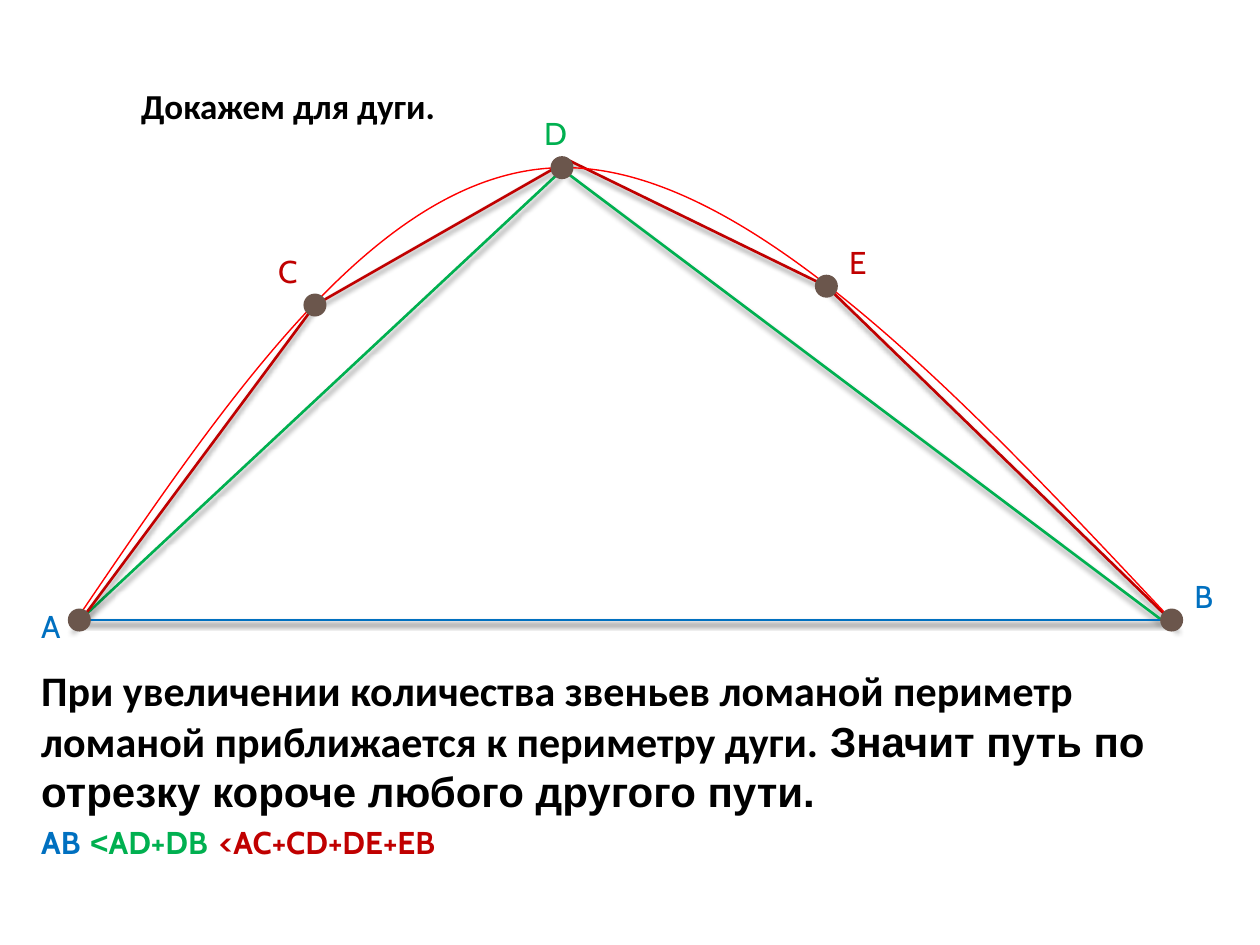
from lxml.etree import SubElement
from pptx import Presentation
from pptx.dml.color import RGBColor
from pptx.enum.shapes import MSO_CONNECTOR, MSO_SHAPE
from pptx.enum.text import MSO_ANCHOR, MSO_AUTO_SIZE, PP_ALIGN
from pptx.oxml.ns import qn
from pptx.util import Cm, Pt

BLUE = RGBColor(0x00, 0x70, 0xC0)
GREEN = RGBColor(0x00, 0xB0, 0x50)
DARK_RED = RGBColor(0xC0, 0x00, 0x00)
RED = RGBColor(0xFF, 0x00, 0x00)
BROWN = RGBColor(0x6B, 0x56, 0x4C)
BLACK = RGBColor(0x00, 0x00, 0x00)

DOT_SIZE = 0.41
LABEL_HEIGHT = 1.02
FORMULA_TOP = 16.46

# All positions are in centimetres.
A, B = (1.6, 12.5), (23.62, 12.5)
C, D, E = (6.35, 6.15), (11.33, 3.38), (16.66, 5.77)
PEAK = (11.46, 3.23)

SEGMENTS = [
    (E, (23.75, 12.65), DARK_RED),
    ((11.46, 3.51), (23.42, 12.5), GREEN),
    (PEAK, E, DARK_RED),
    ((1.45, 12.65), (11.38, 3.38), GREEN),
    (C, PEAK, DARK_RED),
    (A, B, BLUE),
    ((1.73, 12.37), C, DARK_RED),
]
ARC = [(1.57, 12.45), (4.65, 7.92), (7.7, 3.38), (11.38, 3.38),
       (15.04, 3.38), (19.33, 7.92), (23.62, 12.5)]
LABELS = [
    ("A", 0.58, 12.12, 0.79, BLUE),
    ("B", 23.83, 11.51, 0.99, BLUE),
    ("C", 5.36, 4.95, 0.99, DARK_RED),
    ("D", 10.72, 2.18, 0.99, GREEN),
    ("E", 16.87, 4.78, 0.79, DARK_RED),
]


def add_run(p, text, font="Cabin", size=18, color=BLACK, bold=False):
    r = p.add_run()
    r.text = text
    r.font.name = font
    r.font.size = Pt(size)
    r.font.color.rgb = color
    r.font.bold = bold


def add_text_box(s, left, top, width, height=LABEL_HEIGHT):
    """Add a wrapping text box and return its first paragraph."""
    tf = s.shapes.add_textbox(Cm(left), Cm(top), Cm(width), Cm(height)).text_frame
    tf.word_wrap = True
    tf.auto_size = MSO_AUTO_SIZE.SHAPE_TO_FIT_TEXT
    return tf.paragraphs[0]


def add_title(s, text):
    sp = s.shapes.title
    sp.left, sp.top, sp.width, sp.height = Cm(2.59), Cm(1.57), Cm(20.24), Cm(1.09)
    tf = sp.text_frame
    tf.vertical_anchor = MSO_ANCHOR.TOP
    tf.auto_size = MSO_AUTO_SIZE.SHAPE_TO_FIT_TEXT
    p = tf.paragraphs[0]
    p.alignment = PP_ALIGN.LEFT
    add_run(p, text, "Calibri", 20, bold=True)


def add_shadow(line):
    effects = SubElement(line._element.spPr, qn("a:effectLst"))
    shadow = SubElement(effects, qn("a:outerShdw"), blurRad=str(Pt(3)),
                        dist=str(Pt(2.4)), dir="5400000", rotWithShape="0")
    color = SubElement(shadow, qn("a:srgbClr"), val=str(BLACK))
    SubElement(color, qn("a:alpha"), val="45000")


def add_segment(s, start, end, color):
    line = s.shapes.add_connector(MSO_CONNECTOR.STRAIGHT,
                                  *(Cm(v) for v in start + end))
    line.line.color.rgb = color
    line.line.width = Pt(1.5)
    add_shadow(line)


def add_arc(s, points):
    """Draw cubic curves through a start point and triples of control points."""
    start, *rest = [(Cm(x), Cm(y)) for x, y in points]
    builder = s.shapes.build_freeform(*start)
    builder.add_line_segments(rest, close=False)
    sp = builder.convert_to_shape()
    sp.fill.background()
    sp.line.color.rgb = RED
    sp.line.width = Pt(0.79)
    sp.shadow.inherit = False

    outline = next(sp._element.iter(qn("a:path")))
    steps = outline.findall(qn("a:lnTo"))
    for i in range(0, len(steps), 3):
        curve = SubElement(outline, qn("a:cubicBezTo"))
        for step in steps[i:i + 3]:
            curve.append(step[0])
            outline.remove(step)


def add_dot(s, center):
    x, y = (Cm(v - DOT_SIZE / 2) for v in center)
    sp = s.shapes.add_shape(MSO_SHAPE.FLOWCHART_CONNECTOR, x, y,
                            Cm(DOT_SIZE), Cm(DOT_SIZE))
    sp.fill.solid()
    sp.fill.fore_color.rgb = BROWN
    sp.line.color.rgb = BROWN
    sp.line.width = Pt(1.5)
    sp.shadow.inherit = False


def add_formula(s):
    p = add_text_box(s, 4.17, FORMULA_TOP, 7.14)
    add_run(p, "<AC+CD+DE+EB", color=DARK_RED, bold=True)
    p = add_text_box(s, 1.57, FORMULA_TOP, 3.76)
    add_run(p, "<", "Arial", color=GREEN, bold=True)
    add_run(p, "AD+DB", color=GREEN, bold=True)
    p = add_text_box(s, 0.58, FORMULA_TOP, 2.18)
    add_run(p, "AB", color=BLUE, bold=True)


def add_conclusion(s):
    p = add_text_box(s, 0.58, 13.28, 23.62, 3.3)
    add_run(p, "При увеличении количества звеньев ломаной периметр ломаной "
               "приближается к периметру дуги.", "Calibri", 24, bold=True)
    add_run(p, " Значит путь по отрезку короче любого другого пути.",
            "Arial", 24, bold=True)


def main():
    prs = Presentation()
    prs.slide_width, prs.slide_height = Cm(25.4), Cm(19.05)
    s = prs.slides.add_slide(prs.slide_layouts[5])
    add_title(s, "Докажем для дуги.")
    for start, end, color in SEGMENTS:
        add_segment(s, start, end, color)
    add_arc(s, ARC)
    for text, left, top, width, color in LABELS:
        add_run(add_text_box(s, left, top, width), text, color=color)
    for center in (A, B, C, D, E):
        add_dot(s, center)
    add_formula(s)
    add_conclusion(s)
    prs.save("out.pptx")


if __name__ == "__main__":
    main()
